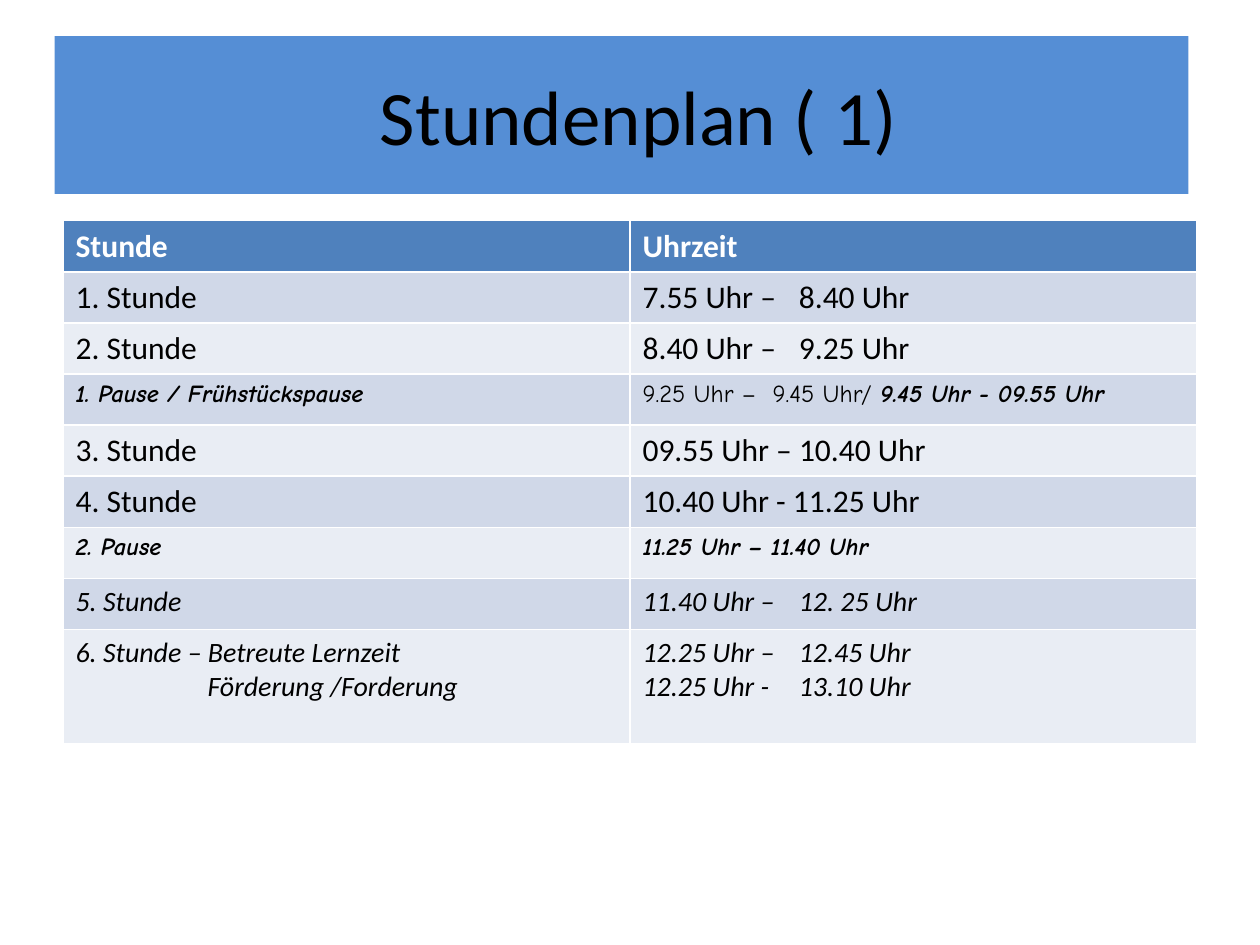
from dataclasses import dataclass

from lxml.etree import SubElement
from pptx import Presentation
from pptx.dml.color import RGBColor
from pptx.enum.shapes import MSO_SHAPE
from pptx.enum.text import MSO_ANCHOR, PP_ALIGN
from pptx.oxml.ns import qn
from pptx.util import Cm, Pt


@dataclass(frozen=True)
class TextStyle:
    size: int
    font: str = "Calibri"
    color: str = "000000"
    bold: bool = False
    italic: bool = False


@dataclass(frozen=True)
class Theme:
    banner: str = "558ED5"
    header: str = "4F81BD"
    bands: tuple = ("D0D8E8", "E9EDF4")
    title: TextStyle = TextStyle(44)
    heading: TextStyle = TextStyle(18, color="FFFFFF", bold=True)
    lesson: TextStyle = TextStyle(18)
    pause: TextStyle = TextStyle(14, "Comic Neue", bold=True, italic=True)
    late_lesson: TextStyle = TextStyle(16, italic=True)


THEME = Theme()
ROW_HEIGHT = Cm(1.03)
LAST_ROW_HEIGHT = Cm(2.31)
END_TIME_TAB = Cm(3.15)
PAUSE_TAB = Cm(2.62)
SUBJECT_INDENT = Cm(2.66)

TIMETABLE = [
    (THEME.heading, "Stunde", "Uhrzeit"),
    (THEME.lesson, "1. Stunde", "7.55 Uhr –\t8.40 Uhr"),
    (THEME.lesson, "2. Stunde", "8.40 Uhr –\t9.25 Uhr"),
    (THEME.pause, "1. Pause / Frühstückspause", "9.25 Uhr –\t9.45 Uhr/ "),
    (THEME.lesson, "3. Stunde", "09.55 Uhr – 10.40 Uhr"),
    (THEME.lesson, "4. Stunde", "10.40 Uhr - 11.25 Uhr"),
    (THEME.pause, "2. Pause", "11.25 Uhr – 11.40 Uhr"),
    (THEME.late_lesson, "5. Stunde", "11.40 Uhr –\t12. 25 Uhr"),
    (THEME.late_lesson, "6. Stunde – Betreute Lernzeit\nFörderung /Forderung",
     "12.25 Uhr –\t12.45 Uhr\n12.25 Uhr -\t13.10 Uhr"),
]
BREAKFAST_ROW = 3


def paint(fill, color):
    fill.solid()
    fill.fore_color.rgb = RGBColor.from_string(color)


def style_paragraph(paragraph, style):
    font = paragraph.font
    font.size = Pt(style.size)
    font.name = style.font
    font.bold = style.bold
    font.italic = style.italic
    font.color.rgb = RGBColor.from_string(style.color)


def set_tab(paragraph, position):
    properties = paragraph._p.get_or_add_pPr()
    tabs = SubElement(properties, qn("a:tabLst"))
    SubElement(tabs, qn("a:tab"), pos=str(position), algn="l")
    properties.insert(0, tabs)


def add_title(slide):
    banner = slide.shapes.add_shape(
        MSO_SHAPE.RECTANGLE, Cm(1.1), Cm(0.73), Cm(22.86), Cm(3.18))
    banner.shadow.inherit = False
    paint(banner.fill, THEME.banner)
    banner.line.fill.background()
    frame = banner.text_frame
    frame.word_wrap = True
    frame.margin_left = Cm(0.95)
    frame.vertical_anchor = MSO_ANCHOR.MIDDLE
    frame.text = "Stundenplan ( 1)"
    frame.paragraphs[0].alignment = PP_ALIGN.CENTER
    style_paragraph(frame.paragraphs[0], THEME.title)


def fill_cell(cell, text, style, color):
    paint(cell.fill, color)
    cell.text = text
    for paragraph in cell.text_frame.paragraphs:
        style_paragraph(paragraph, style)
        if "\t" in paragraph.text:
            set_tab(paragraph, PAUSE_TAB if style == THEME.pause else END_TIME_TAB)


def add_breakfast_time(cell):
    paragraph = cell.text_frame.paragraphs[0]
    playtime = paragraph.runs[0]
    playtime.font.bold = playtime.font.italic = False
    breakfast = paragraph.add_run()
    breakfast.text = "9.45 Uhr - 09.55 Uhr"


def add_timetable(slide):
    height = ROW_HEIGHT * (len(TIMETABLE) - 1) + LAST_ROW_HEIGHT
    table = slide.shapes.add_table(
        len(TIMETABLE), 2, Cm(1.27), Cm(4.45), Cm(22.86), height).table
    for index, (style, lesson, time) in enumerate(TIMETABLE):
        table.rows[index].height = ROW_HEIGHT
        color = THEME.bands[(index - 1) % 2] if index else THEME.header
        fill_cell(table.cell(index, 0), lesson, style, color)
        fill_cell(table.cell(index, 1), time, style, color)
    add_breakfast_time(table.cell(BREAKFAST_ROW, 1))
    last = len(TIMETABLE) - 1
    table.rows[last].height = LAST_ROW_HEIGHT
    subject = table.cell(last, 0).text_frame.paragraphs[1]
    subject._p.get_or_add_pPr().set("marL", str(SUBJECT_INDENT))


def main():
    presentation = Presentation()
    presentation.slide_width = Cm(25.4)
    presentation.slide_height = Cm(19.05)
    slide = presentation.slides.add_slide(presentation.slide_layouts[6])
    add_title(slide)
    add_timetable(slide)
    presentation.save("out.pptx")


if __name__ == "__main__":
    main()
